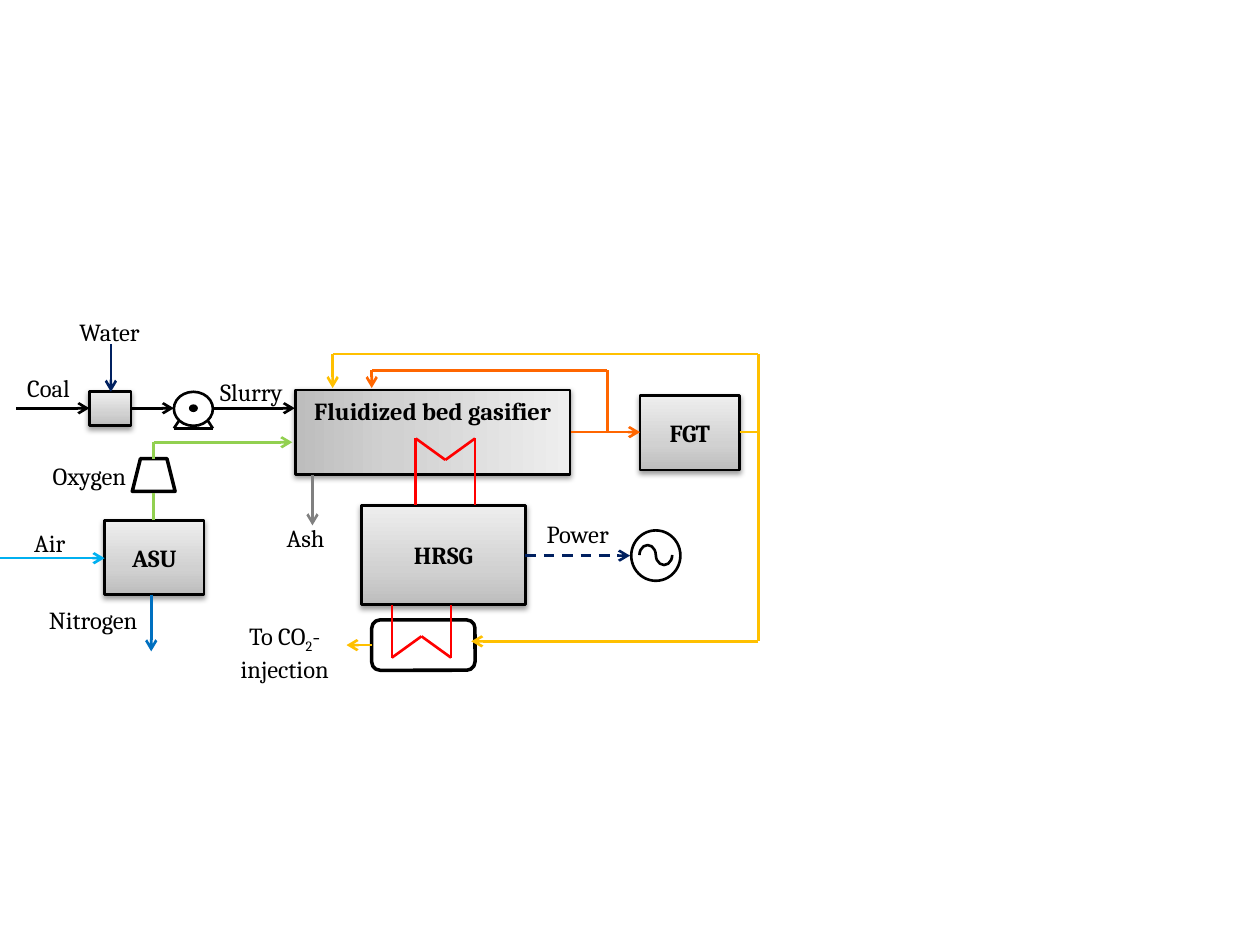
from dataclasses import dataclass
from copy import deepcopy
from lxml.etree import SubElement
from pptx import Presentation
from pptx.dml.color import RGBColor
from pptx.enum.dml import MSO_LINE
from pptx.enum.shapes import MSO_CONNECTOR, MSO_SHAPE
from pptx.enum.text import MSO_ANCHOR, MSO_AUTO_SIZE, PP_ALIGN
from pptx.oxml.ns import qn
from pptx.util import Inches, Pt


@dataclass(frozen=True)
class Theme:
    font: str = "Cambria"
    size: float = 14
    thin: float = 1.5
    thick: float = 2
    black: str = "000000"
    white: str = "FFFFFF"
    air: str = "00B0F0"
    water: str = "002060"
    oxygen: str = "92D050"
    nitro: str = "0070C0"
    ash: str = "808080"
    hot: str = "FF6600"
    gas: str = "FFC000"
    steam: str = "FF0000"
    metal: tuple = ((0, "BDBDBD"), (0.35, "D1D1D1"), (1, "EEEEEE"))


@dataclass(frozen=True)
class Unit:
    box: tuple
    text: str = ""
    turn: int = 0


@dataclass(frozen=True)
class Part:
    kind: MSO_SHAPE
    box: tuple
    fill: str | None = None
    width: float = 1.5
    turn: int = 0
    adjust: tuple = ()


@dataclass(frozen=True)
class Wire:
    color: str
    points: tuple
    arrow: bool = True
    dash: bool = False
    kind: MSO_CONNECTOR = MSO_CONNECTOR.STRAIGHT


@dataclass(frozen=True)
class Label:
    text: str
    box: tuple


look = Theme()
deck = Presentation()
deck.slide_width, deck.slide_height = Inches(10), Inches(7.5)
slide = deck.slides.add_slide(deck.slide_layouts[6])


def coil(left: float, base: float, tip: float, mid: float) -> Wire:
    right, center = left + 0.47, left + 0.235
    points = (left, base), (left, tip), (center, mid), (right, tip), (right, base)
    return Wire(look.steam, points, arrow=False)


UNITS = (
    Unit((3.1, 2.34, 0.67, 2.18), "Fluidized bed gasifier", turn=90),
    Unit((5.08, 3.14, 0.79, 0.59), "FGT"),
    Unit((2.87, 4.01, 1.3, 0.79), "HRSG"),
    Unit((0.83, 4.13, 0.79, 0.59), "ASU"),
    Unit((0.71, 3.11, 0.33, 0.27)),
)
PARTS = (
    Part(MSO_SHAPE.OVAL, (5.01, 4.21, 0.39, 0.4), look.white),
    Part(MSO_SHAPE.ARC, (5.06, 4.34, 0.16, 0.13), turn=270, adjust=(162, 54.72)),
    Part(MSO_SHAPE.ARC, (5.19, 4.34, 0.16, 0.13), turn=90, adjust=(162, 54.72)),
    Part(MSO_SHAPE.TRAPEZOID, (1.05, 3.64, 0.34, 0.26), look.white, look.thick),
    Part(MSO_SHAPE.OVAL, (1.38, 3.11, 0.31, 0.27), look.white),
    Part(MSO_SHAPE.FLOWCHART_CONNECTOR, (1.51, 3.22, 0.05, 0.04), look.black),
    Part(MSO_SHAPE.ROUNDED_RECTANGLE, (2.95, 4.92, 0.82, 0.4), width=look.thick),
)
WIRES = (
    Wire(look.air, ((-0.04, 4.43), (0.83, 4.43))),
    Wire(look.black, ((0.13, 3.24), (0.71, 3.24))),
    Wire(look.black, ((1.04, 3.24), (1.38, 3.24))),
    Wire(look.black, ((1.69, 3.24), (2.34, 3.24))),
    Wire(look.black, ((1.42, 3.34), (1.38, 3.4), (1.69, 3.4), (1.65, 3.34)), arrow=False),
    Wire(look.water, ((0.88, 2.73), (0.88, 3.11))),
    Wire(look.water, ((4.17, 4.41), (5, 4.41)), dash=True),
    Wire(look.oxygen, ((1.22, 4.13), (1.22, 3.91)), arrow=False),
    Wire(look.oxygen, ((1.22, 3.64), (1.22, 3.51), (2.32, 3.51))),
    Wire(look.nitro, ((1.2, 4.72), (1.2, 5.17))),
    Wire(look.ash, ((2.48, 3.77), (2.48, 4.17))),
    Wire(look.hot, ((4.53, 3.43), (5.08, 3.43)), kind=MSO_CONNECTOR.ELBOW),
    Wire(look.hot, ((4.82, 3.43), (4.82, 2.94), (2.95, 2.94), (2.95, 3.08))),
    Wire(look.gas, ((5.87, 3.43), (6.02, 3.43)), arrow=False),
    Wire(look.gas, ((6.02, 3.43), (6.02, 5.09), (3.74, 5.09))),
    Wire(look.gas, ((6.02, 3.43), (6.02, 2.81), (2.64, 2.81), (2.64, 3.08))),
    Wire(look.gas, ((2.95, 5.12), (2.75, 5.12))),
    coil(3.3, 4.01, 3.48, 3.65),
    coil(3.11, 4.8, 5.22, 5.05),
)
LABELS = (
    Label("Coal", (0.05, 2.91, 0.67, 0.34)),
    Label("Air", (0.06, 4.14, 0.67, 0.34)),
    Label("Power", (4.21, 4.07, 0.75, 0.34)),
    Label("Water", (0.46, 2.47, 0.82, 0.34)),
    Label("Oxygen", (0.3, 3.61, 0.82, 0.34)),
    Label("Ash", (2.09, 4.1, 0.67, 0.34)),
    Label("Slurry", (1.63, 2.94, 0.73, 0.34)),
    Label("To CO_2_-injection", (1.72, 4.88, 1.08, 0.57)),
    Label("Nitrogen", (0.2, 4.75, 1.08, 0.34)),
)


def write(frame, text: str, *, bold: bool = False, anchor=MSO_ANCHOR.TOP) -> None:
    frame.word_wrap = True
    frame.vertical_anchor = anchor
    line = frame.paragraphs[0]
    line.alignment = PP_ALIGN.CENTER
    for index, piece in enumerate(text.split("_")):
        run = line.add_run()
        run.text = piece
        font = run.font
        font.name, font.size, font.bold = look.font, Pt(look.size), bold
        font.color.rgb = RGBColor.from_string(look.black)
        if index % 2:
            font._element.set("baseline", "-25000")


def stroke(line, color: str, width: float) -> None:
    line.color.rgb = RGBColor.from_string(color)
    line.width = Pt(width)


def draw_part(part: Part):
    shape = slide.shapes.add_shape(part.kind, *map(Inches, part.box))
    shape.shadow.inherit = False
    shape.rotation = part.turn
    for index, value in enumerate(part.adjust):
        shape.adjustments[index] = value
    if part.fill:
        shape.fill.solid()
        shape.fill.fore_color.rgb = RGBColor.from_string(part.fill)
    else:
        shape.fill.background()
    stroke(shape.line, look.black, part.width)
    return shape


def draw_unit(unit: Unit) -> None:
    shape = draw_part(Part(MSO_SHAPE.RECTANGLE, unit.box, turn=unit.turn))
    shape.fill.gradient()
    first = shape._element.spPr.find(".//" + qn("a:gs"))
    first.addnext(deepcopy(first))
    for stop, (place, color) in zip(shape.fill.gradient_stops, look.metal):
        stop.position = place
        stop.color.rgb = RGBColor.from_string(color)
    shape.fill.gradient_angle = 90
    effect = shape._element.spPr.find(qn("a:effectLst"))
    shade = SubElement(effect, qn("a:outerShdw"), blurRad=str(Pt(3.1)),
                       dist=str(Pt(1.6)), dir="5400000", rotWithShape="0")
    color = SubElement(shade, qn("a:srgbClr"), val=look.black)
    SubElement(color, qn("a:alpha"), val="38000")
    if unit.text:
        anchor = MSO_ANCHOR.TOP if unit.turn else MSO_ANCHOR.MIDDLE
        write(shape.text_frame, unit.text, bold=True, anchor=anchor)
    if unit.turn:
        shape.text_frame._txBody.bodyPr.set("vert", "vert270")


def draw_wire(wire: Wire) -> None:
    for start, end in zip(wire.points, wire.points[1:]):
        line = slide.shapes.add_connector(wire.kind, *map(Inches, start + end))
        stroke(line.line, wire.color, look.thin)
        if wire.dash:
            line.line.dash_style = MSO_LINE.DASH
        if wire.arrow and end == wire.points[-1]:
            SubElement(line.line._get_or_add_ln(), qn("a:tailEnd"), type="arrow")
        SubElement(line._element.spPr, qn("a:effectLst"))


def draw_label(label: Label) -> None:
    frame = slide.shapes.add_textbox(*map(Inches, label.box)).text_frame
    write(frame, label.text)
    frame.auto_size = MSO_AUTO_SIZE.SHAPE_TO_FIT_TEXT


for draw, items in ((draw_unit, UNITS), (draw_part, PARTS),
                    (draw_wire, WIRES), (draw_label, LABELS)):
    for item in items:
        draw(item)
deck.save("out.pptx")
